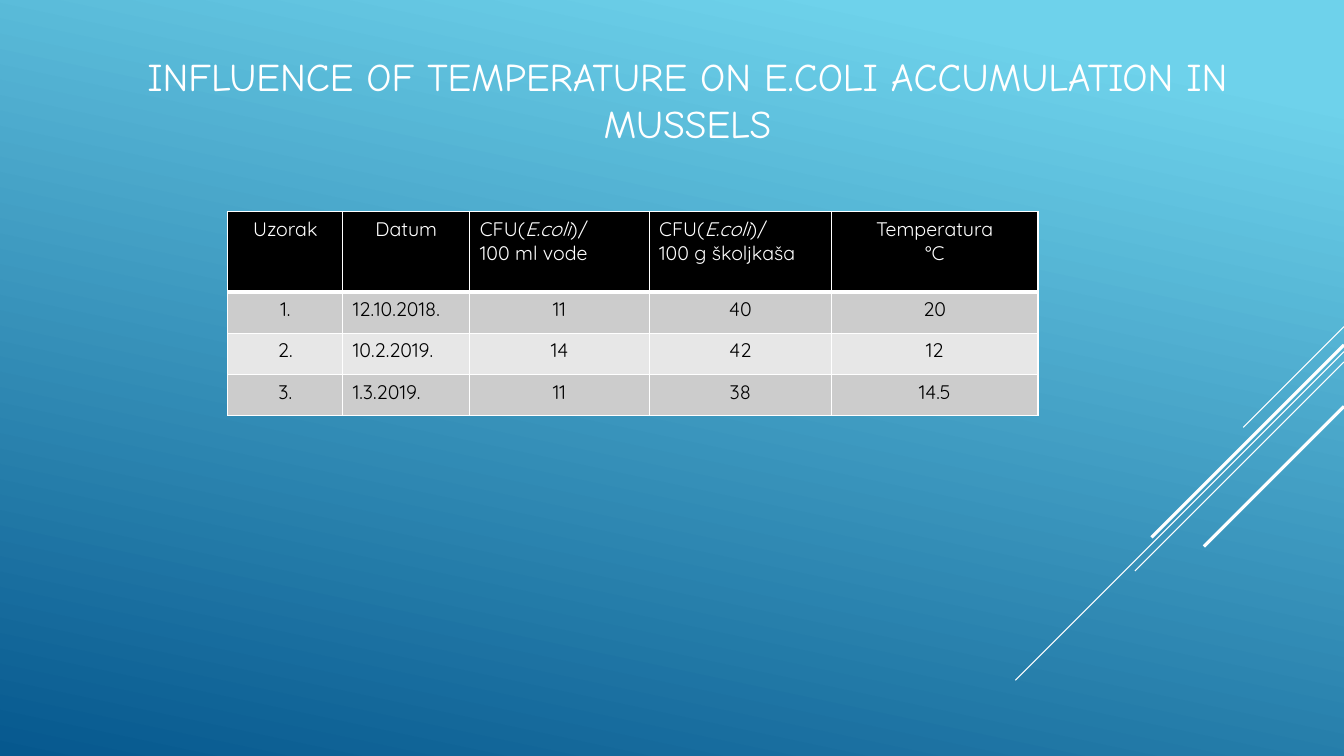
from lxml import etree
from pptx import Presentation
from pptx.dml.color import RGBColor
from pptx.enum.shapes import MSO_CONNECTOR
from pptx.enum.text import MSO_ANCHOR, PP_ALIGN
from pptx.oxml.ns import qn
from pptx.util import Cm, Pt

WHITE = RGBColor(0xFF, 0xFF, 0xFF)
BLACK = RGBColor(0x00, 0x00, 0x00)
GREY = RGBColor(0xCC, 0xCC, 0xCC)
PALE_GREY = RGBColor(0xE7, 0xE7, 0xE7)
SKY = RGBColor(0x6E, 0xD2, 0xEB)
OCEAN = RGBColor(0x06, 0x58, 0x8E)
STRAIGHT = MSO_CONNECTOR.STRAIGHT
LEFT, CENTER = PP_ALIGN.LEFT, PP_ALIGN.CENTER
MIDDLE = MSO_ANCHOR.MIDDLE

WIDTH, HEIGHT = 33.87, 19.05
TITLE = "INFLUENCE OF TEMPERATURE ON E.COLI ACCUMULATION IN MUSSELS"
RAYS = [(8.23, 2.54, 0.75), (8.86, 8.28, 0.75), (9.12, 5.27, 0.75),
        (8.69, 4.85, 2.25), (10.24, 3.53, 2.25)]
COLUMN_WIDTHS = [2.9, 3.2, 4.52, 4.6, 5.2]
ROW_HEIGHTS = [2.03, 1.04, 1.04, 1.04]
HEADINGS = ["Uzorak", "Datum", "CFU(*E.coli*)/\n100 ml vode",
            "CFU(*E.coli*)/\n100 g školjkaša", "Temperatura\n°C"]
SAMPLES = [["1.", "12.10.2018.", "11", "40", "20"],
           ["2.", "10.2.2019.", "14", "42", "12"],
           ["3.", "1.3.2019.", "11", "38", "14.5"]]
HEADING_ALIGNS = [CENTER, CENTER, LEFT, LEFT, CENTER]
SAMPLE_ALIGNS = [CENTER, LEFT, CENTER, CENTER, CENTER]


class MusselSlide:
    """Draws the parts of the mussel slide in one style."""

    title_font = "Comic Neue"
    table_font = "Quicksand"

    def __init__(self, slide):
        self.slide = slide

    def background(self):
        fill = self.slide.background.fill
        fill.gradient()
        fill.gradient_angle = 258
        for stop, color, position in zip(fill.gradient_stops, (SKY, OCEAN), (0.1, 1)):
            stop.color.rgb = color
            stop.position = position

    def ray(self, top, reach, weight):
        line = self.slide.shapes.add_connector(
            STRAIGHT, Cm(WIDTH), Cm(top), Cm(WIDTH - reach), Cm(top + reach))
        line.line.color.rgb = WHITE
        line.line.width = Pt(weight)
        etree.SubElement(line._element.spPr, qn("a:effectLst"))

    def title(self, text, left, top, width, height):
        box = self.slide.shapes.add_textbox(Cm(left), Cm(top), Cm(width), Cm(height))
        frame = box.text_frame
        frame.word_wrap = True
        frame.vertical_anchor = MIDDLE
        frame.text = text
        heading = frame.paragraphs[0]
        heading.alignment = CENTER
        self.style(heading.runs[0], self.title_font, 28, WHITE)

    def table(self, left, top):
        table = self.slide.shapes.add_table(
            len(ROW_HEIGHTS), len(COLUMN_WIDTHS), Cm(left), Cm(top),
            Cm(sum(COLUMN_WIDTHS)), Cm(sum(ROW_HEIGHTS))).table
        for column, width in zip(table.columns, COLUMN_WIDTHS):
            column.width = Cm(width)
        for row, height in zip(table.rows, ROW_HEIGHTS):
            row.height = Cm(height)
        for r, texts in enumerate([HEADINGS] + SAMPLES):
            is_header = r == 0
            aligns = HEADING_ALIGNS if is_header else SAMPLE_ALIGNS
            fill = BLACK if is_header else (GREY if r % 2 else PALE_GREY)
            color = WHITE if is_header else BLACK
            for c, (text, align) in enumerate(zip(texts, aligns)):
                cell = table.cell(r, c)
                self.borders(cell, 3 if is_header else 1)
                cell.fill.solid()
                cell.fill.fore_color.rgb = fill
                self.cell_text(cell, text, align, color)

    def cell_text(self, cell, text, align, color):
        frame = cell.text_frame
        frame.text = text
        for paragraph in frame.paragraphs:
            paragraph.alignment = align
            parts = paragraph.text.split("*")
            paragraph.clear()
            for index, part in enumerate(parts):
                run = paragraph.add_run()
                run.text = part
                self.style(run, self.table_font, 14, color)
                run.font.italic = index % 2 == 1

    def borders(self, cell, bottom):
        properties = cell._tc.get_or_add_tcPr()
        for side, weight in (("L", 1), ("R", 1), ("T", 1), ("B", bottom)):
            edge = etree.SubElement(properties, qn(f"a:ln{side}"), w=str(Pt(weight)))
            fill = etree.SubElement(edge, qn("a:solidFill"))
            etree.SubElement(fill, qn("a:srgbClr"), val=str(WHITE))

    def style(self, run, font, size, color):
        run.font.name = font
        run.font.size = Pt(size)
        run.font.bold = False
        run.font.color.rgb = color


def main():
    deck = Presentation()
    deck.slide_width, deck.slide_height = Cm(WIDTH), Cm(HEIGHT)
    mussels = MusselSlide(deck.slides.add_slide(deck.slide_layouts[6]))
    mussels.background()
    for top, reach, weight in RAYS:
        mussels.ray(top, reach, weight)
    mussels.title(TITLE, 3.05, 0.4, 28.55, 4.2)
    mussels.table(5.74, 5.33)
    deck.save("out.pptx")


if __name__ == "__main__":
    main()
